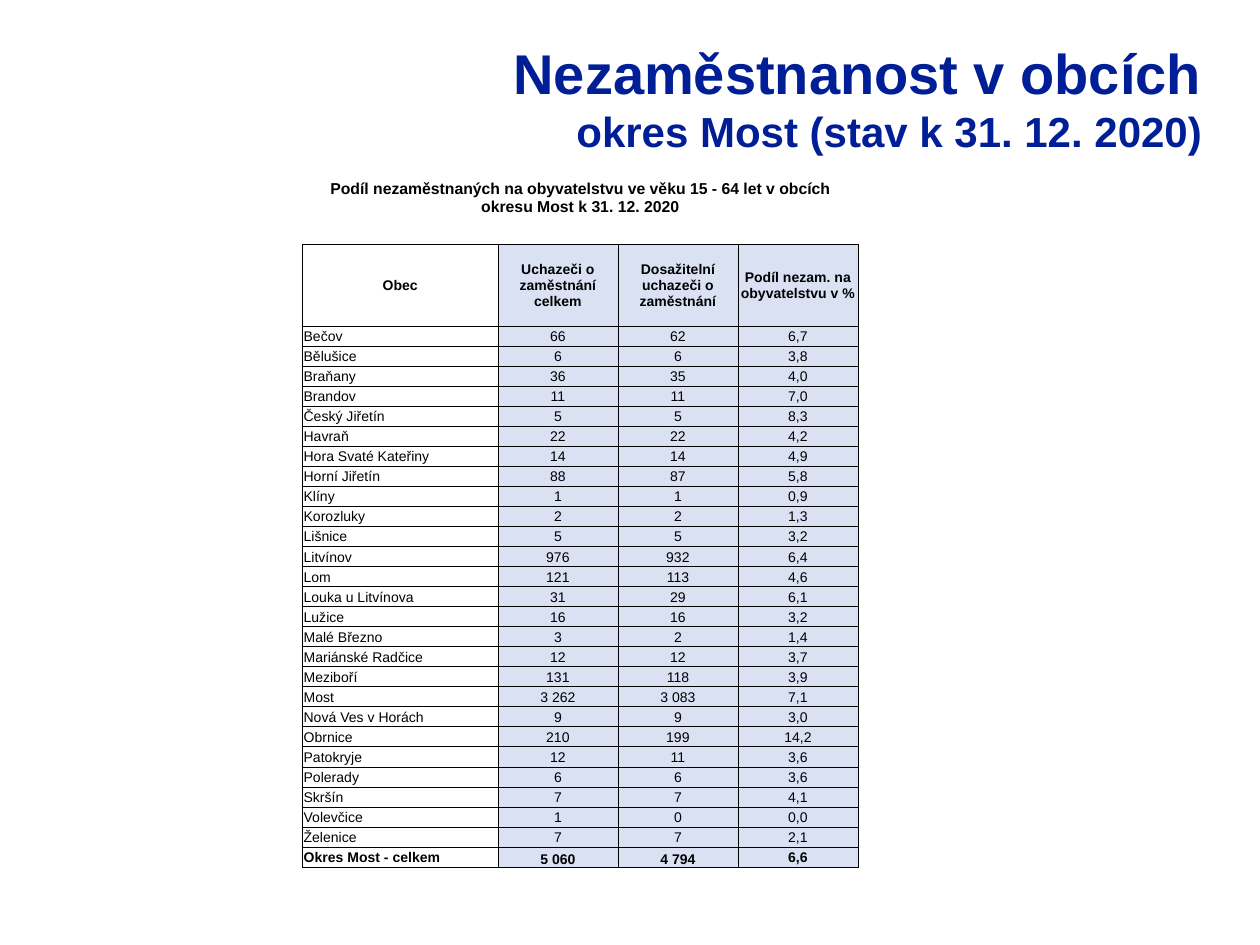
from lxml.etree import SubElement
from pptx import Presentation
from pptx.dml.color import RGBColor
from pptx.enum.text import MSO_ANCHOR, MSO_AUTO_SIZE, PP_ALIGN
from pptx.oxml.ns import qn
from pptx.util import Pt

NAVY = RGBColor(0x00, 0x1E, 0x96)
BLACK = RGBColor(0x00, 0x00, 0x00)
PALE_BLUE = RGBColor(0xD9, 0xE1, 0xF2)
FONT = "Arial"
NO_STYLE = "{2D5ABB26-0587-4C30-8999-92F81FD0307C}"

CAPTION = ("Podíl nezaměstnaných na obyvatelstvu ve věku 15 - 64 let "
           "v obcích okresu Most k 31. 12. 2020")
HEADINGS = ("Obec", "Uchazeči o zaměstnání celkem",
            "Dosažitelní uchazeči o zaměstnání",
            "Podíl nezam. na obyvatelstvu v %")
MUNICIPALITIES = [
    ("Bečov", "66", "62", "6,7"),
    ("Bělušice", "6", "6", "3,8"),
    ("Braňany", "36", "35", "4,0"),
    ("Brandov", "11", "11", "7,0"),
    ("Český Jiřetín", "5", "5", "8,3"),
    ("Havraň", "22", "22", "4,2"),
    ("Hora Svaté Kateřiny", "14", "14", "4,9"),
    ("Horní Jiřetín", "88", "87", "5,8"),
    ("Klíny", "1", "1", "0,9"),
    ("Korozluky", "2", "2", "1,3"),
    ("Lišnice", "5", "5", "3,2"),
    ("Litvínov", "976", "932", "6,4"),
    ("Lom", "121", "113", "4,6"),
    ("Louka u Litvínova", "31", "29", "6,1"),
    ("Lužice", "16", "16", "3,2"),
    ("Malé Březno", "3", "2", "1,4"),
    ("Mariánské Radčice", "12", "12", "3,7"),
    ("Meziboří", "131", "118", "3,9"),
    ("Most", "3 262", "3 083", "7,1"),
    ("Nová Ves v Horách", "9", "9", "3,0"),
    ("Obrnice", "210", "199", "14,2"),
    ("Patokryje", "12", "11", "3,6"),
    ("Polerady", "6", "6", "3,6"),
    ("Skršín", "7", "7", "4,1"),
    ("Volevčice", "1", "0", "0,0"),
    ("Želenice", "7", "7", "2,1"),
]
TOTAL = ("Okres Most - celkem", "5 060", "4 794", "6,6")

CAPTION_HEIGHT, SPACER_HEIGHT, HEADING_HEIGHT, ROW_HEIGHT = 28.8, 16.3, 46.9, 11.47
NAME_SHARE = 0.352


def add_run(paragraph, text, size, color, bold):
    run = paragraph.add_run()
    run.text = text
    run.font.name = FONT
    run.font.size = Pt(size)
    run.font.bold = bold
    run.font.color.rgb = color


def add_heading(slide, left, top, width, height):
    heading = slide.shapes.title
    heading.left, heading.top = Pt(left), Pt(top)
    heading.width, heading.height = Pt(width), Pt(height)
    frame = heading.text_frame
    frame.auto_size = MSO_AUTO_SIZE.NONE
    frame.vertical_anchor = MSO_ANCHOR.TOP
    frame.margin_top = Pt(7)
    paragraph = frame.paragraphs[0]
    paragraph.alignment = PP_ALIGN.RIGHT
    add_run(paragraph, "Nezaměstnanost v obcích", 32, NAVY, True)
    paragraph.add_line_break()
    add_run(paragraph, "okres Most (stav k 31. 12. 2020)", 24, NAVY, True)


def add_borders(cell, sides):
    properties = cell._tc.get_or_add_tcPr()
    for side in sides:
        line = SubElement(properties, qn(f"a:ln{side}"), w=str(Pt(0.5)))
        fill = SubElement(line, qn("a:solidFill"))
        SubElement(fill, qn("a:srgbClr"), val=str(BLACK))


def set_margins(cell):
    cell.margin_left = cell.margin_top = cell.margin_right = Pt(0.72)
    cell.margin_bottom = 0


def fill_cell(cell, text, size=8, bold=False, centered=True, anchor=MSO_ANCHOR.MIDDLE):
    set_margins(cell)
    cell.vertical_anchor = anchor
    paragraph = cell.text_frame.paragraphs[0]
    paragraph.alignment = PP_ALIGN.CENTER if centered else PP_ALIGN.LEFT
    add_run(paragraph, text, size, BLACK, bold)


def add_unemployment_table(slide, left, top, width, height):
    records = [HEADINGS, *MUNICIPALITIES, TOTAL]
    heights = [CAPTION_HEIGHT, SPACER_HEIGHT, HEADING_HEIGHT]
    heights += [ROW_HEIGHT] * (len(records) - 1)
    frame = slide.shapes.add_table(len(heights), len(HEADINGS),
                                   Pt(left), Pt(top), Pt(width), Pt(height))
    table = frame.table
    table.first_row = table.horz_banding = False
    table._tbl.tblPr.find(qn("a:tableStyleId")).text = NO_STYLE

    name_width = width * NAME_SHARE
    figure_width = (width - name_width) / (len(HEADINGS) - 1)
    for index, column in enumerate(table.columns):
        column.width = Pt(figure_width if index else name_width)
    for row, row_height in zip(table.rows, heights):
        row.height = Pt(row_height)

    # Caption across all columns, then an empty spacer row
    caption = table.cell(0, 0)
    caption.merge(table.cell(0, len(HEADINGS) - 1))
    fill_cell(caption, CAPTION, size=9, bold=True, anchor=MSO_ANCHOR.BOTTOM)
    for spacer in table.rows[1].cells:
        set_margins(spacer)
        add_borders(spacer, "B")
        SubElement(spacer.text_frame.paragraphs[0]._p, qn("a:endParaRPr"), sz="800")

    # Headings, municipalities and district total
    for row_index, record in enumerate(records, start=2):
        for column_index, text in enumerate(record):
            cell = table.cell(row_index, column_index)
            low = record is TOTAL and column_index in (1, 2)
            fill_cell(cell, text,
                      bold=record in (HEADINGS, TOTAL),
                      centered=record is HEADINGS or column_index > 0,
                      anchor=MSO_ANCHOR.BOTTOM if low else MSO_ANCHOR.MIDDLE)
            add_borders(cell, "LRTB")
            if column_index:
                cell.fill.solid()
                cell.fill.fore_color.rgb = PALE_BLUE


def main():
    presentation = Presentation()
    presentation.slide_width, presentation.slide_height = Pt(720), Pt(540)
    slide = presentation.slides.add_slide(presentation.slide_layouts[5])
    add_heading(slide, 172.8, 15.1, 521.3, 90.7)
    add_unemployment_table(slide, 172.8, 94.3, 317.5, 401.7)
    presentation.save("out.pptx")


if __name__ == "__main__":
    main()
